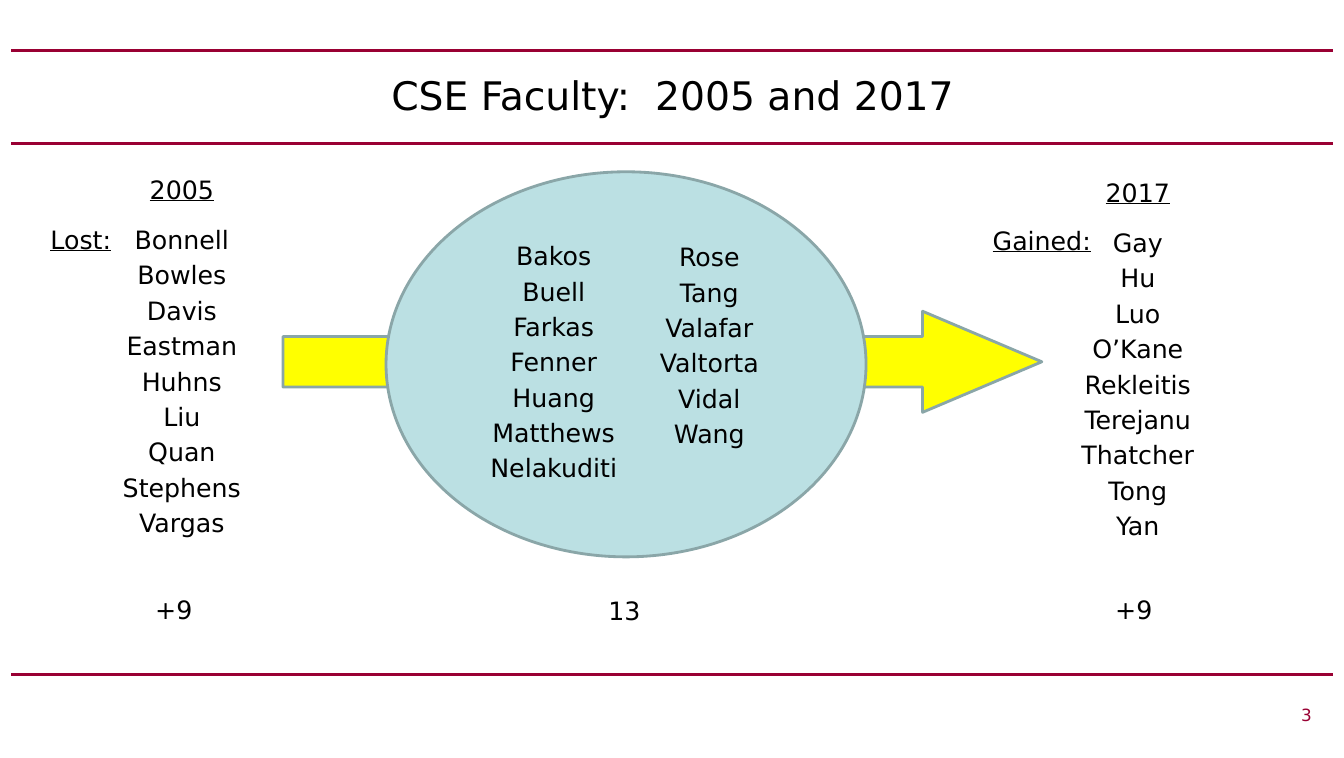
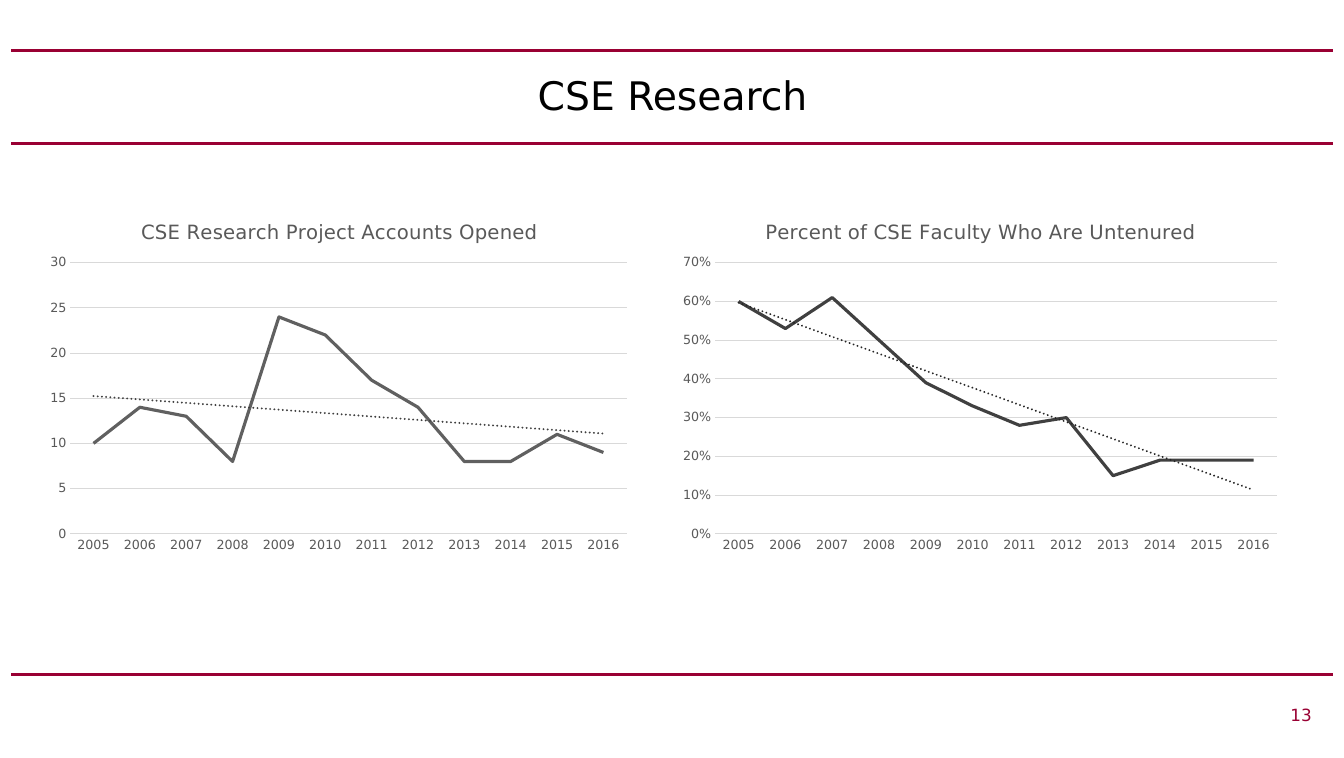
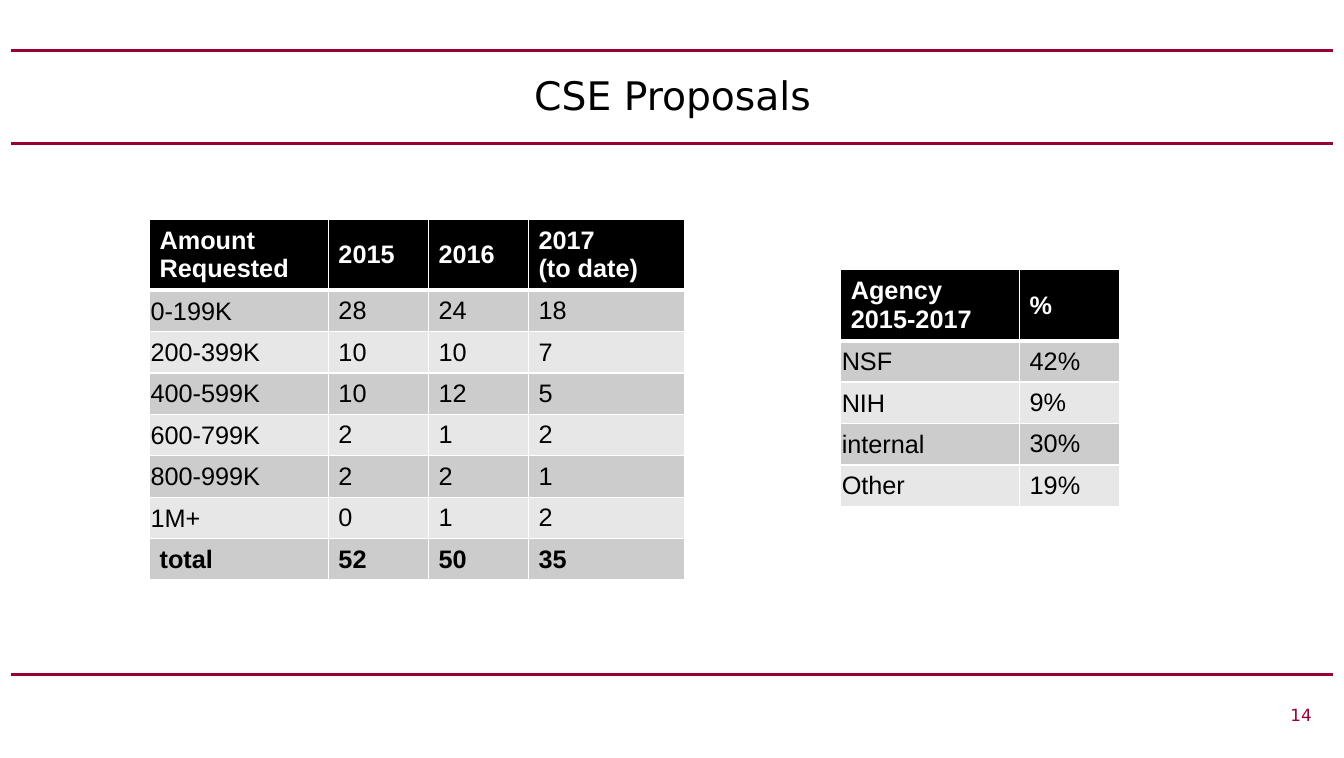
from lxml import etree
from pptx import Presentation
from pptx.chart.data import CategoryChartData
from pptx.dml.color import RGBColor
from pptx.enum.chart import XL_CHART_TYPE, XL_MARKER_STYLE, XL_TICK_MARK
from pptx.enum.shapes import MSO_CONNECTOR, MSO_SHAPE
from pptx.enum.text import MSO_ANCHOR, PP_ALIGN
from pptx.oxml import parse_xml
from pptx.oxml.ns import nsdecls, qn
from pptx.util import Inches, Pt

LEFT, CENTER, RIGHT = PP_ALIGN.LEFT, PP_ALIGN.CENTER, PP_ALIGN.RIGHT
TOP, MIDDLE = MSO_ANCHOR.TOP, MSO_ANCHOR.MIDDLE
ARROW, ELLIPSE = MSO_SHAPE.RIGHT_ARROW, MSO_SHAPE.OVAL
STRAIGHT = MSO_CONNECTOR.STRAIGHT
LINE_CHART = XL_CHART_TYPE.LINE
NO_MARKER, NO_TICK = XL_MARKER_STYLE.NONE, XL_TICK_MARK.NONE

FONT, TABLE_FONT = "DejaVu Sans", "Arial"
COLORS = {
    "garnet": "990033", "black": "000000", "white": "FFFFFF",
    "yellow": "FFFF00", "pale_blue": "BBE0E3", "outline": "8AA6A8",
    "chart_text": "595959", "grid": "D9D9D9",
    "mid_gray": "606060", "dark_gray": "404040", "trend_gray": "262626",
    "band_dark": "CCCCCC", "band_light": "E7E7E7",
}

RULE_TOPS = (0.5, 1.42, 6.67)
COLUMN_WIDTH, NAME_PITCH = 1.5, 0.35

# Each entry: centre, top, lines, underlined
FACULTY_COLUMNS = [
    (5.48, 2.33, ["Bakos", "Buell", "Farkas", "Fenner", "Huang", "Matthews",
                  "Nelakuditi"], False),
    (7.02, 2.34, ["Rose", "Tang", "Valafar", "Valtorta", "Vidal", "Wang"], False),
    (1.8, 2.17, ["Bonnell", "Bowles", "Davis", "Eastman", "Huhns", "Liu", "Quan",
                 "Stephens", "Vargas"], False),
    (11.26, 2.2, ["Gay", "Hu", "Luo", "O’Kane", "Rekleitis", "Terejanu",
                  "Thatcher", "Tong", "Yan"], False),
    (1.8, 1.67, ["2005"], True),
    (11.26, 1.7, ["2017"], True),
    (1.72, 5.83, ["+9"], False),
    (11.22, 5.83, ["+9"], False),
    (6.18, 5.84, ["13"], False),
    (0.8, 2.17, ["Lost:"], True),
    (10.31, 2.18, ["Gained:"], True),
]

YEARS = [str(year) for year in range(2005, 2017)]
RESEARCH_CHARTS = [
    {"title": "CSE Research Project Accounts Opened",
     "values": [10, 14, 13, 8, 24, 22, 17, 14, 8, 8, 11, 9],
     "left": 0.4, "width": 5.92, "plot_x": 0.05, "plot_w": 0.93,
     "top_value": 30, "step": 5, "format": "0",
     "line": "mid_gray", "trend": "dark_gray"},
    {"title": "Percent of CSE Faculty Who Are Untenured",
     "values": [0.6, 0.53, 0.61, 0.5, 0.39, 0.33, 0.28, 0.3, 0.15, 0.19, 0.19, 0.19],
     "left": 6.65, "width": 6.11, "plot_x": 0.07, "plot_w": 0.91,
     "top_value": 0.7, "step": 0.1, "format": "0%",
     "line": "dark_gray", "trend": "trend_gray"},
]

AMOUNT_ROWS = [
    ("Amount\nRequested", "2015", "2016", "2017\n(to date)"),
    ("0-199K", "28", "24", "18"),
    ("200-399K", "10", "10", "7"),
    ("400-599K", "10", "12", "5"),
    ("600-799K", "2", "1", "2"),
    ("800-999K", "2", "2", "1"),
    ("1M+", "0", "1", "2"),
    ("total", "52", "50", "35"),
]
AGENCY_ROWS = [
    ("Agency\n2015-2017", "%"),
    ("NSF", "42%"),
    ("NIH", "9%"),
    ("internal", "30%"),
    ("Other", "19%"),
]
ROW_HEIGHT = 0.41


def rgb(name):
    return RGBColor.from_string(COLORS[name])


def style_font(font, size, color="black", name=FONT, bold=False, underline=False):
    font.size, font.name, font.bold = Pt(size), name, bold
    font.underline = underline
    font.color.rgb = rgb(color)


def write_lines(frame, lines, size, align=LEFT, space_before=0, **style):
    for number, line in enumerate(lines):
        paragraph = frame.add_paragraph() if number else frame.paragraphs[0]
        paragraph.alignment = align
        if number and space_before:
            paragraph.space_before = Pt(space_before)
        run = paragraph.add_run()
        run.text = line
        style_font(run.font, size, **style)


def add_text(slide, box, lines, size, anchor=TOP, **style):
    frame = slide.shapes.add_textbox(*map(Inches, box)).text_frame
    frame.word_wrap = True
    frame.vertical_anchor = anchor
    write_lines(frame, lines, size, **style)


def add_base_slide(deck, title, number):
    """Add a slide with the shared rules, title and page number."""
    slide = deck.slides.add_slide(deck.slide_layouts[6])
    for top in RULE_TOPS:
        rule = slide.shapes.add_connector(
            STRAIGHT, Inches(0.11), Inches(top), Inches(13.19), Inches(top))
        rule.line.color.rgb = rgb("garnet")
        rule.line.width = Pt(2.25)
        etree.SubElement(rule.element.spPr, qn("a:effectLst"))
    add_text(slide, (0.67, 0.5, 11.97, 0.87), [title], 28, anchor=MIDDLE, align=CENTER)
    add_text(slide, (3.77, 6.92, 9.31, 0.33), [str(number)], 12,
             align=RIGHT, color="garnet")
    return slide


def add_outlined_shape(slide, kind, box, fill):
    shape = slide.shapes.add_shape(kind, *map(Inches, box))
    shape.shadow.inherit = False
    shape.fill.solid()
    shape.fill.fore_color.rgb = rgb(fill)
    shape.line.color.rgb = rgb("outline")
    shape.line.width = Pt(2)
    return shape


def add_trend_line(series, color):
    trend = parse_xml(
        f'<c:trendline {nsdecls("c", "a")}><c:spPr><a:ln w="19050" cap="rnd">'
        f'<a:solidFill><a:srgbClr val="{COLORS[color]}"/></a:solidFill>'
        '<a:prstDash val="sysDot"/></a:ln></c:spPr><c:trendlineType val="linear"/>'
        '<c:dispRSqr val="0"/><c:dispEq val="0"/></c:trendline>')
    series._element.find(qn("c:cat")).addprevious(trend)


def place_plot(chart, x, w, y=0.17, h=0.76):
    """Fix the inner plot area, in fractions of the chart."""
    plot_area = chart._chartSpace.chart.plotArea
    for automatic in plot_area.findall(qn("c:layout")):
        plot_area.remove(automatic)
    sizes = "".join(f'<c:{key} val="{value}"/>'
                    for key, value in (("x", x), ("y", y), ("w", w), ("h", h)))
    plot_area.insert(0, parse_xml(
        f'<c:layout {nsdecls("c")}><c:manualLayout><c:layoutTarget val="inner"/>'
        f'<c:xMode val="edge"/><c:yMode val="edge"/>{sizes}'
        '</c:manualLayout></c:layout>'))


def add_trend_chart(slide, content):
    data = CategoryChartData(number_format=content["format"])
    data.categories = YEARS
    data.add_series("Series 1", content["values"])
    box = (content["left"], 2, content["width"], 3.53)
    chart = slide.shapes.add_chart(LINE_CHART, *map(Inches, box), data).chart
    style_font(chart.font, 10)
    chart.has_legend = False
    chart.has_title = True
    write_lines(chart.chart_title.text_frame, [content["title"]], 14,
                align=CENTER, color="chart_text")
    chart.chart_title.include_in_layout = False

    years, values = chart.category_axis, chart.value_axis
    for axis in (years, values):
        axis.major_tick_mark = axis.minor_tick_mark = NO_TICK
        style_font(axis.tick_labels.font, 9, "chart_text")
    values.minimum_scale, values.maximum_scale = 0, content["top_value"]
    values.major_unit = content["step"]
    values.tick_labels.number_format = content["format"]
    values.tick_labels.number_format_is_linked = False
    values.format.line.fill.background()
    for line in (years.format.line, values.major_gridlines.format.line):
        line.color.rgb = rgb("grid")
        line.width = Pt(0.75)

    chart.plots[0].vary_by_categories = False
    series = chart.plots[0].series[0]
    series.smooth = False
    series.marker.style = NO_MARKER
    series.format.line.color.rgb = rgb(content["line"])
    series.format.line.width = Pt(2.25)
    add_trend_line(series, content["trend"])
    place_plot(chart, content["plot_x"], content["plot_w"])


def set_borders(cell, top, bottom):
    """Draw white borders, with top and bottom widths in points."""
    properties = cell._tc.get_or_add_tcPr()
    for place, (side, width) in enumerate(
            (("L", 1), ("R", 1), ("T", top), ("B", bottom))):
        properties.insert(place, parse_xml(
            f'<a:ln{side} {nsdecls("a")} w="{Pt(width)}"><a:solidFill>'
            f'<a:srgbClr val="{COLORS["white"]}"/></a:solidFill></a:ln{side}>'))


def add_banded_table(slide, left, top, widths, rows):
    table = slide.shapes.add_table(
        len(rows), len(widths), Inches(left), Inches(top),
        Inches(sum(widths)), Inches(ROW_HEIGHT * len(rows))).table
    table.horz_banding = False
    for column, width in zip(table.columns, widths):
        column.width = Inches(width)
    for r, row in enumerate(rows):
        header, total = r == 0, row[0] == "total"
        table.rows[r].height = Inches(ROW_HEIGHT)
        band = "black" if header else "band_dark" if r % 2 else "band_light"
        for c, text in enumerate(row):
            cell = table.cell(r, c)
            cell.vertical_anchor = MIDDLE
            cell.fill.solid()
            cell.fill.fore_color.rgb = rgb(band)
            if c == 0 and not (header or total):
                cell.margin_left = cell.margin_right = cell.margin_top = Inches(0.01)
                cell.margin_bottom = 0
            write_lines(cell.text_frame, text.split("\n"), 18, name=TABLE_FONT,
                        color="white" if header else "black", bold=header or total)
            set_borders(cell, top=3 if r == 1 else 1, bottom=3 if header else 1)


def main():
    deck = Presentation()
    deck.slide_width, deck.slide_height = Inches(13.3), Inches(7.5)

    faculty = add_base_slide(deck, "CSE Faculty:  2005 and 2017", 3)
    arrow = add_outlined_shape(faculty, ARROW, (2.8, 3.08, 7.51, 1), "yellow")
    arrow.adjustments[0], arrow.adjustments[1] = 0.5, 1.18
    add_outlined_shape(faculty, ELLIPSE, (3.82, 1.7, 4.75, 3.81), "pale_blue")
    for center, top, lines, underline in FACULTY_COLUMNS:
        box = (center - COLUMN_WIDTH / 2, top, COLUMN_WIDTH,
               0.1 + NAME_PITCH * len(lines))
        add_text(faculty, box, lines, 18, align=CENTER, space_before=3.6,
                 underline=underline)

    research = add_base_slide(deck, "CSE Research", 13)
    for content in RESEARCH_CHARTS:
        add_trend_chart(research, content)

    proposals = add_base_slide(deck, "CSE Proposals", 14)
    add_banded_table(proposals, 1.48, 2.17, (1.77, 0.99, 0.99, 1.55), AMOUNT_ROWS)
    add_banded_table(proposals, 8.32, 2.67, (1.77, 0.99), AGENCY_ROWS)

    deck.save("out.pptx")


if __name__ == "__main__":
    main()
